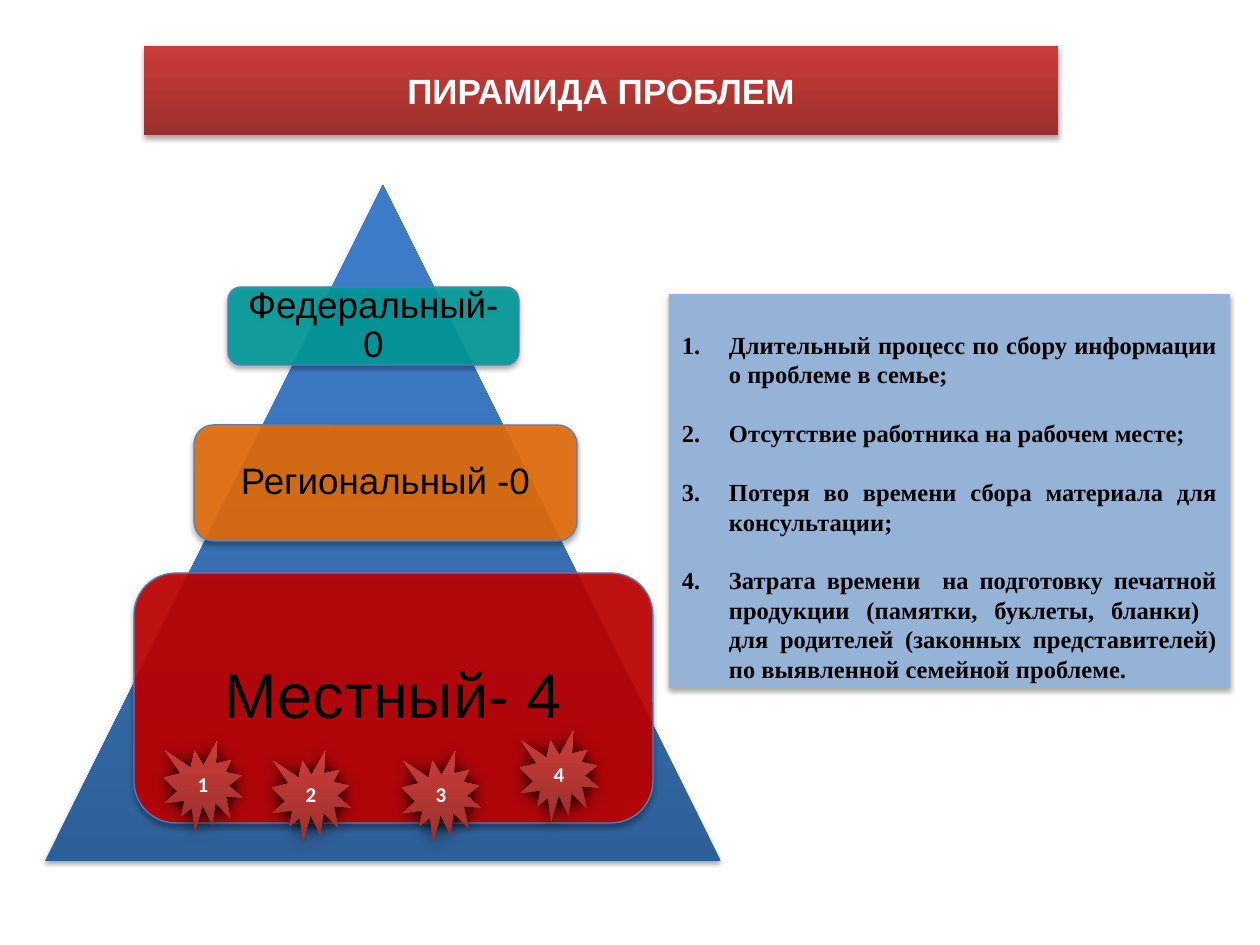
from pptx import Presentation
from pptx.dml.color import RGBColor as RGB
from pptx.enum.shapes import MSO_SHAPE as Geo
from pptx.enum.text import MSO_ANCHOR as Anchor, MSO_AUTO_SIZE as Auto, PP_ALIGN as Align
from pptx.oxml.ns import qn
from pptx.util import Pt
from lxml.etree import SubElement as Sub

BLACK = RGB(0, 0, 0)
WHITE = RGB(255, 255, 255)
NAVY = RGB(0x2F, 0x5F, 0x99)
BLUE = RGB(0x3D, 0x7C, 0xC7)
DARK = RGB(0x9C, 0x2F, 0x2C)
RED = RGB(0xCB, 0x3D, 0x39)
PALE = RGB(0x95, 0xB3, 0xD7)
EDGE = RGB(0x4F, 0x81, 0xBD)
TEAL = RGB(0, 0x99, 0x99)
AMBER = RGB(0xE4, 0x6C, 0x0A)
CRIMSON = RGB(0xC0, 0, 0)

TITLE = "ПИРАМИДА ПРОБЛЕМ"
LEVELS = [
    ("Федеральный-0", (228, 287, 291, 78), TEAL, 21, 11),
    ("Региональный -0", (194, 425, 383, 116), AMBER, 21, 11),
    ("Местный- 4", (134, 573, 519, 250), CRIMSON, 36, 19),
]
ISSUES = [
    "Длительный процесс по сбору информации о проблеме в семье;",
    "Отсутствие работника на рабочем месте;",
    "Потеря во времени сбора материала для консультации;",
    "Затрата времени  на подготовку печатной продукции (памятки, буклеты, бланки)  "
    "для родителей (законных представителей) по выявленной семейной проблеме.",
]
STARS = [(164, 741), (272, 751), (402, 751), (520, 731)]
STAR_SIZE = (79, 92)
LEAD = Pt(16.8)
SOFT = (35, 3.1, 1.8)
HARD = (100, 8.5, 1)


def px(n):
    return round(n * 914400 / 126)


def shade(shape, alpha, blur, dist):
    shape.shadow.inherit = False
    effects = shape._element.spPr.find(qn("a:effectLst"))
    outer = Sub(effects, qn("a:outerShdw"), blurRad=str(Pt(blur)), dist=str(Pt(dist)),
                dir="5400000", rotWithShape="0")
    color = Sub(outer, qn("a:srgbClr"), val="000000")
    Sub(color, qn("a:alpha"), val=str(alpha * 1000))


def blend(shape, low, high, end=1):
    shape.fill.gradient()
    shape.fill.gradient_angle = 90
    for stop, color, pos in zip(shape.fill.gradient_stops, (low, high), (0, end)):
        stop.color.rgb = color
        stop.position = pos


def paint(shape, color, alpha=100):
    shape.fill.solid()
    shape.fill.fore_color.rgb = color
    if alpha < 100:
        tint = shape._element.spPr.find(qn("a:solidFill")).find(qn("a:srgbClr"))
        Sub(tint, qn("a:alpha"), val=str(alpha * 1000))


def add(slide, geo, box, shadow=SOFT):
    shape = slide.shapes.add_shape(geo, *map(px, box))
    shape.line.fill.background()
    shade(shape, *shadow)
    return shape


def frame(shape, sides, anchor=Anchor.MIDDLE):
    text = shape.text_frame
    text.word_wrap = True
    text.auto_size = Auto.NONE
    text.vertical_anchor = anchor
    text.margin_left, text.margin_top, text.margin_right, text.margin_bottom = map(px, sides)
    return text


def write(para, words, size, font, color, bold=False, align=Align.CENTER):
    para.alignment = align
    run = para.add_run()
    run.text = words
    run.font.size = Pt(size)
    run.font.name = font
    run.font.bold = bold
    run.font.color.rgb = color


def number(para):
    props = para._p.get_or_add_pPr()
    props.set("marL", str(px(47)))
    props.set("indent", str(-px(47)))
    Sub(Sub(props, qn("a:buClr")), qn("a:srgbClr"), val=str(BLACK))
    Sub(props, qn("a:buAutoNum"), type="arabicPeriod")


def main():
    deck = Presentation()
    deck.slide_width, deck.slide_height = px(1260), px(945)
    slide = deck.slides.add_slide(deck.slide_layouts[5])

    title = slide.shapes.title
    title.left, title.top, title.width, title.height = map(px, (144, 46, 914, 89))
    blend(title, DARK, RED)
    shade(title, *SOFT)
    text = frame(title, (13, 6, 13, 6))
    write(text.paragraphs[0], TITLE, 20, "Arial", WHITE, True)

    pyramid = add(slide, Geo.ISOSCELES_TRIANGLE, (45, 185, 676, 676))
    blend(pyramid, NAVY, BLUE, 0.8)

    for words, box, color, size, pad in LEVELS:
        level = add(slide, Geo.ROUNDED_RECTANGLE, box)
        paint(level, color, 90)
        level.line.color.rgb = EDGE
        level.line.width = Pt(0.75)
        para = frame(level, [pad] * 4).paragraphs[0]
        para.line_spacing = 0.9
        write(para, words, size, "Arial", BLACK)

    note = add(slide, Geo.RECTANGLE, (669, 294, 561, 394))
    paint(note, PALE)
    text = frame(note, (13, 36, 13, 6), Anchor.TOP)
    for i, words in enumerate(ISSUES):
        para = text.add_paragraph() if i else text.paragraphs[0]
        number(para)
        para.line_spacing = LEAD
        if i:
            para.space_before = LEAD
        write(para, words, 14, "Times New Roman", BLACK, True, Align.JUSTIFY)

    for i, spot in enumerate(STARS, 1):
        star = add(slide, Geo.EXPLOSION1, spot + STAR_SIZE, HARD)
        blend(star, DARK, RED)
        text = frame(star, (13, 6, 13, 6))
        write(text.paragraphs[0], str(i), 12, "Calibri", WHITE, True)

    deck.save("out.pptx")


if __name__ == "__main__":
    main()
